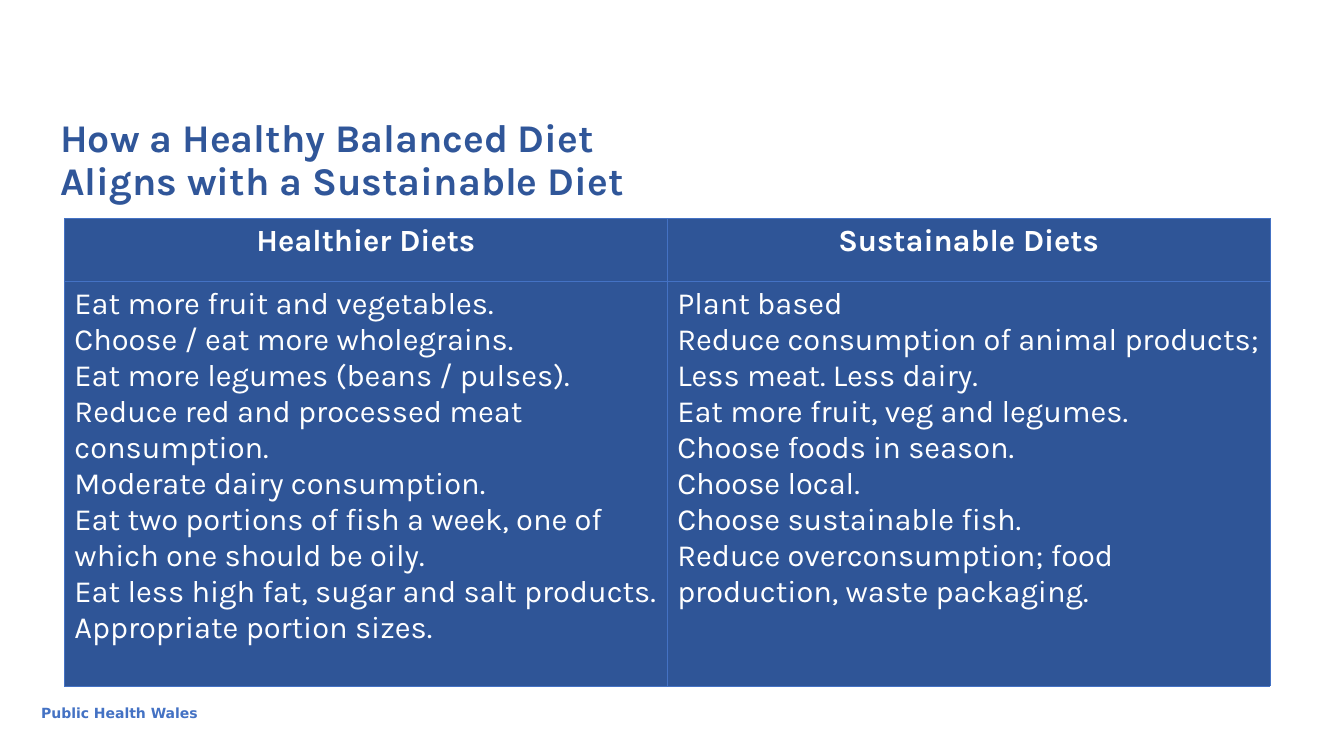
from lxml.etree import SubElement
from pptx import Presentation
from pptx.dml.color import RGBColor
from pptx.enum.text import MSO_ANCHOR, PP_ALIGN
from pptx.oxml.ns import qn
from pptx.util import Pt

WHITE = RGBColor(0xFF, 0xFF, 0xFF)
TITLE_BLUE = RGBColor(0x30, 0x56, 0x99)
CELL_BLUE = RGBColor(0x2F, 0x55, 0x97)
ACCENT_BLUE = RGBColor(0x44, 0x72, 0xC4)

DIETS = {
    "Healthier Diets": [
        "Eat more fruit and vegetables.",
        "Choose / eat more wholegrains.",
        "Eat more legumes (beans / pulses).",
        "Reduce red and processed meat consumption.",
        "Moderate dairy consumption.",
        "Eat two portions of fish a week, one of which one should be oily.",
        "Eat less high fat, sugar and salt products.",
        "Appropriate portion sizes.",
    ],
    "Sustainable Diets": [
        "Plant based",
        "Reduce consumption of animal products; Less meat. Less dairy.",
        "Eat more fruit, veg and legumes.",
        "Choose foods in season.",
        "Choose local.",
        "Choose sustainable fish.",
        "Reduce overconsumption; food production, waste packaging.",
    ],
}


def write_text(frame, lines, font="Karla", size=22, color=WHITE, bold=False,
               align=PP_ALIGN.LEFT, line_spacing=None):
    """Fill a text frame with one formatted paragraph per line."""
    frame.word_wrap = True
    for index, line in enumerate(lines):
        paragraph = frame.add_paragraph() if index else frame.paragraphs[0]
        paragraph.alignment = align
        paragraph.line_spacing = line_spacing
        run = paragraph.add_run()
        run.text = line
        run.font.name = font
        run.font.size = Pt(size)
        run.font.bold = bold
        run.font.color.rgb = color


class SlideBuilder:
    """Draw styled text and tables on one slide."""

    border_color = ACCENT_BLUE
    border_width = 0.5
    cell_fill = CELL_BLUE

    def __init__(self, slide):
        self.slide = slide

    def add_text(self, text, left, top, width, height, anchor=MSO_ANCHOR.TOP, **style):
        box = self.slide.shapes.add_textbox(Pt(left), Pt(top), Pt(width), Pt(height))
        box.text_frame.vertical_anchor = anchor
        write_text(box.text_frame, [text], **style)

    def add_table(self, columns, left, top, column_width, row_heights):
        shape = self.slide.shapes.add_table(
            len(row_heights), len(columns), Pt(left), Pt(top),
            Pt(column_width * len(columns)), Pt(sum(row_heights)))
        table = shape.table
        for row, height in zip(table.rows, row_heights):
            row.height = Pt(height)
        for index, (heading, lines) in enumerate(columns.items()):
            table.columns[index].width = Pt(column_width)
            write_text(table.cell(0, index).text_frame, [heading],
                       bold=True, align=PP_ALIGN.CENTER)
            write_text(table.cell(1, index).text_frame, lines)
        for cell in table.iter_cells():
            self.style_cell(cell)

    def style_cell(self, cell):
        properties = cell._tc.get_or_add_tcPr()
        for side in ("a:lnL", "a:lnR", "a:lnT", "a:lnB"):
            line = SubElement(properties, qn(side), w=str(Pt(self.border_width)))
            fill = SubElement(line, qn("a:solidFill"))
            SubElement(fill, qn("a:srgbClr"), val=str(self.border_color))
        cell.fill.solid()
        cell.fill.fore_color.rgb = self.cell_fill


def main():
    presentation = Presentation()
    presentation.slide_width = Pt(960)
    presentation.slide_height = Pt(540)
    builder = SlideBuilder(presentation.slides.add_slide(presentation.slide_layouts[6]))
    builder.add_text("Public Health Wales", 22.3, 499.7, 130.3, 19.4,
                     font="DejaVu Sans", size=10, color=ACCENT_BLUE, bold=True)
    builder.add_text("How a Healthy Balanced Diet Aligns with a Sustainable Diet",
                     36, 80, 453, 69, anchor=MSO_ANCHOR.BOTTOM,
                     size=28, color=TITLE_BLUE, bold=True, line_spacing=0.9)
    builder.add_table(DIETS, 46, 156, 430.6, (45, 289))
    presentation.save("out.pptx")


if __name__ == "__main__":
    main()
